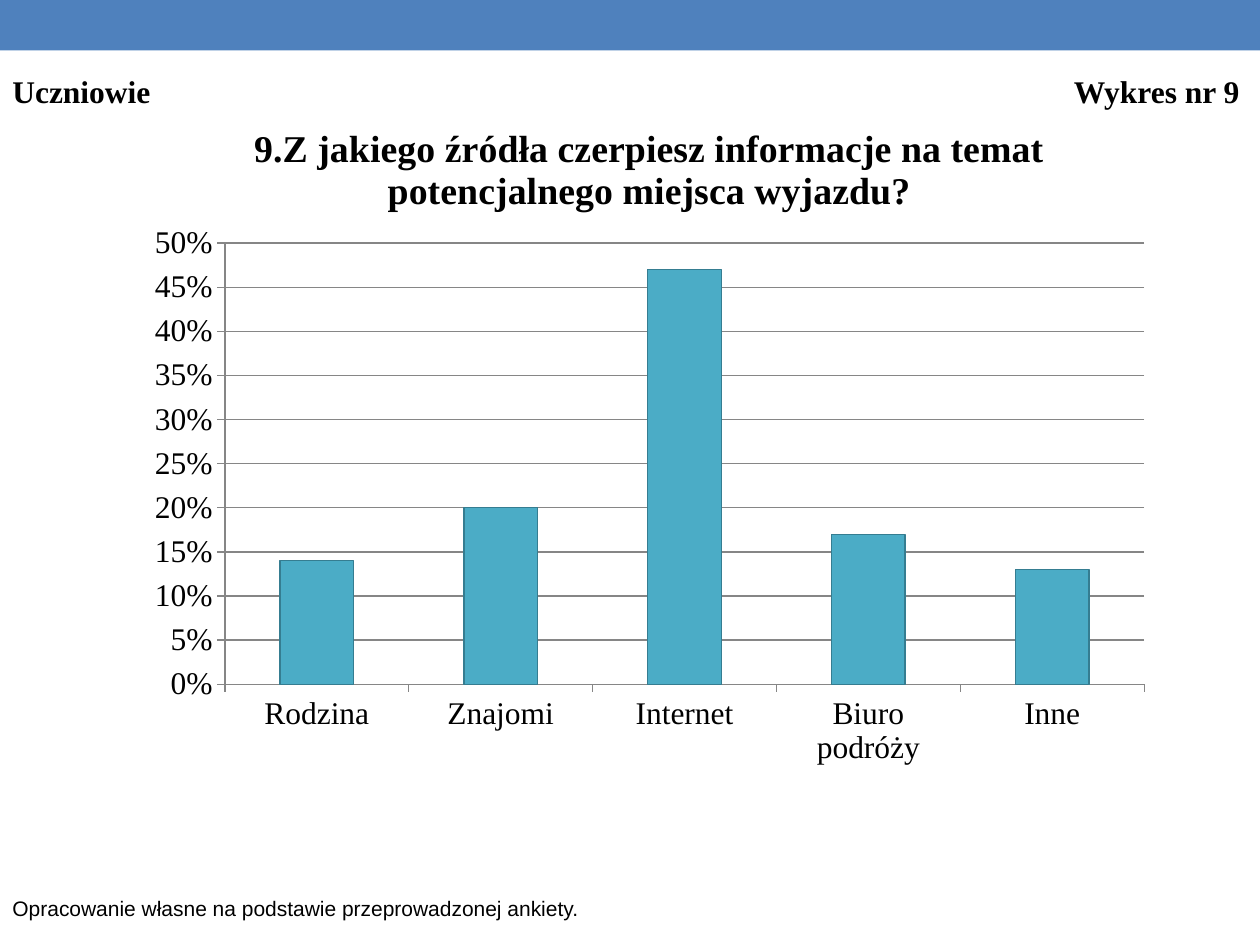
from dataclasses import dataclass

from lxml.etree import SubElement
from pptx import Presentation
from pptx.chart.data import CategoryChartData
from pptx.dml.color import RGBColor
from pptx.enum.chart import XL_CHART_TYPE, XL_TICK_MARK
from pptx.enum.shapes import MSO_SHAPE
from pptx.enum.text import MSO_AUTO_SIZE
from pptx.oxml import parse_xml
from pptx.oxml.ns import nsdecls, qn
from pptx.util import Inches, Pt


@dataclass(frozen=True)
class Theme:
    serif: str = "Times New Roman"
    sans: str = "Arial"
    ink: str = "000000"
    paper: str = "FFFFFF"
    band: str = "4F81BD"
    column: str = "4BACC6"
    column_edge: str = "357D91"
    grid: str = "868686"
    title: float = 21.6
    body: float = 18
    note: float = 12
    hairline: float = 0.75


@dataclass(frozen=True)
class Area:
    """A rectangle in inches."""
    left: float
    top: float
    width: float
    height: float

    def lengths(self) -> tuple:
        return tuple(Inches(n) for n in (self.left, self.top, self.width, self.height))


THEME = Theme()
WIDTH, HEIGHT = 10, 7.5
BAND = Area(0, 0, WIDTH, 0.4)
HEADER = Area(0, 0.52, WIDTH, 0.4)
CHART = Area(1.06, 0.76, 8.19, 5.43)
SOURCE = Area(0, 7.06, 5.12, 0.3)
PLOT_SHARES = {"x": 0.088, "y": 0.215, "w": 0.892, "h": 0.646}
HEADER_TAB = 9.74
QUESTION = "9.Z jakiego źródła czerpiesz informacje na temat potencjalnego miejsca wyjazdu?"
ANSWERS = {"Rodzina": 0.14, "Znajomi": 0.20, "Internet": 0.47,
           "Biuro podróży": 0.17, "Inne": 0.13}


def color(code: str) -> RGBColor:
    return RGBColor.from_string(code)


def format_font(font, name: str, size: float, bold: bool = False) -> None:
    font.name, font.size, font.bold = name, Pt(size), bold
    font.color.rgb = color(THEME.ink)


def format_line(line, code: str) -> None:
    line.color.rgb = color(code)
    line.width = Pt(THEME.hairline)


def add_text(page, area: Area, text: str, *, font: str, size: float,
             bold: bool = False, right_tab: float | None = None) -> None:
    box = page.shapes.add_textbox(*area.lengths())
    frame = box.text_frame
    frame.word_wrap = True
    frame.auto_size = MSO_AUTO_SIZE.SHAPE_TO_FIT_TEXT
    para = frame.paragraphs[0]
    if right_tab is not None:
        tabs = SubElement(para._p.get_or_add_pPr(), qn("a:tabLst"))
        SubElement(tabs, qn("a:tab"), pos=str(Inches(right_tab)), algn="r")
    span = para.add_run()
    span.text = text
    format_font(span.font, font, size, bold)


def add_band(page, area: Area) -> None:
    band = page.shapes.add_shape(MSO_SHAPE.RECTANGLE, *area.lengths())
    band.shadow.inherit = False
    band.fill.solid()
    band.fill.fore_color.rgb = color(THEME.band)
    band.line.fill.background()


def place_plot(chart, shares: dict[str, float]) -> None:
    """Fix the inner plot area as shares of the chart's size."""
    plot_area = chart._chartSpace.chart.plotArea
    for old in plot_area.findall(qn("c:layout")):
        plot_area.remove(old)
    modes = '<c:xMode val="edge"/><c:yMode val="edge"/>'
    places = "".join(f'<c:{key} val="{share}"/>' for key, share in shares.items())
    plot_area.insert(0, parse_xml(
        f'<c:layout {nsdecls("c")}><c:manualLayout><c:layoutTarget val="inner"/>'
        f'{modes}{places}</c:manualLayout></c:layout>'))


def add_border(chart, code: str) -> None:
    chart._chartSpace.chart.addnext(parse_xml(
        f'<c:spPr {nsdecls("c", "a")}><a:noFill/><a:ln w="{Pt(THEME.hairline)}">'
        f'<a:solidFill><a:srgbClr val="{code}"/></a:solidFill></a:ln></c:spPr>'))


def add_column_chart(page, area: Area, title: str, values: dict[str, float]) -> None:
    data = CategoryChartData(number_format="0%")
    data.categories = list(values)
    data.add_series("Series 1", list(values.values()))
    chart = page.shapes.add_chart(
        XL_CHART_TYPE.COLUMN_CLUSTERED, *area.lengths(), data).chart
    format_font(chart.font, THEME.sans, THEME.body)
    chart.has_legend = False

    # Title
    chart.has_title = True
    chart.chart_title.include_in_layout = False
    span = chart.chart_title.text_frame.paragraphs[0].add_run()
    span.text = title
    format_font(span.font, THEME.serif, THEME.title, bold=True)

    # Axes
    for axis in (chart.category_axis, chart.value_axis):
        format_font(axis.tick_labels.font, THEME.serif, THEME.body)
        format_line(axis.format.line, THEME.grid)
        axis.major_tick_mark = XL_TICK_MARK.OUTSIDE
        axis.minor_tick_mark = XL_TICK_MARK.NONE
    scale = chart.value_axis
    scale.minimum_scale, scale.maximum_scale, scale.major_unit = 0, 0.5, 0.05
    scale.tick_labels.number_format = "0%"
    scale.tick_labels.number_format_is_linked = False
    format_line(scale.major_gridlines.format.line, THEME.grid)

    # Columns
    plot = chart.plots[0]
    plot.gap_width = 150
    plot.vary_by_categories = False
    look = plot.series[0].format
    look.fill.solid()
    look.fill.fore_color.rgb = color(THEME.column)
    format_line(look.line, THEME.column_edge)

    place_plot(chart, PLOT_SHARES)
    add_border(chart, THEME.paper)


def main() -> None:
    deck = Presentation()
    deck.slide_width, deck.slide_height = Inches(WIDTH), Inches(HEIGHT)
    page = deck.slides.add_slide(deck.slide_layouts[6])

    add_band(page, BAND)
    add_column_chart(page, CHART, QUESTION, ANSWERS)
    add_text(page, SOURCE, "Opracowanie własne na podstawie przeprowadzonej ankiety.",
             font=THEME.sans, size=THEME.note)
    add_text(page, HEADER, "Uczniowie\tWykres nr 9", font=THEME.serif,
             size=THEME.body, bold=True, right_tab=HEADER_TAB)

    deck.save("out.pptx")


if __name__ == "__main__":
    main()
